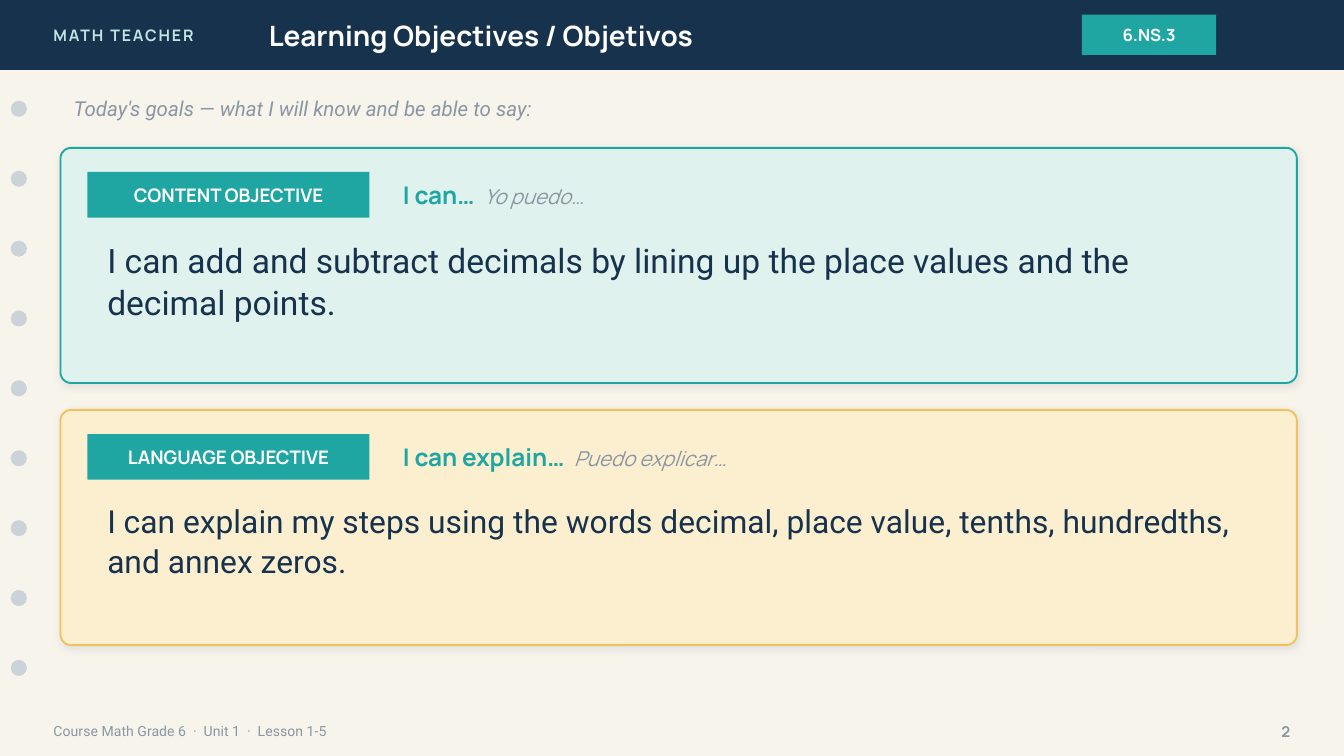
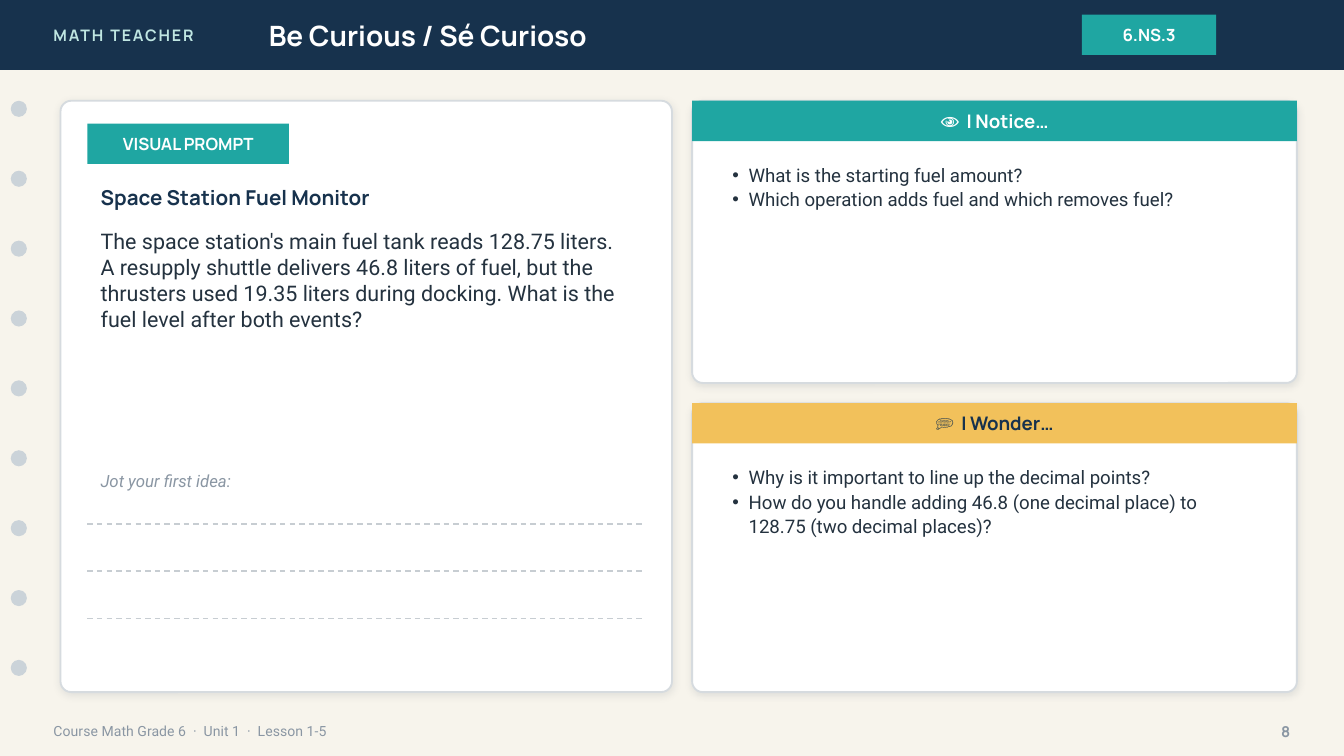
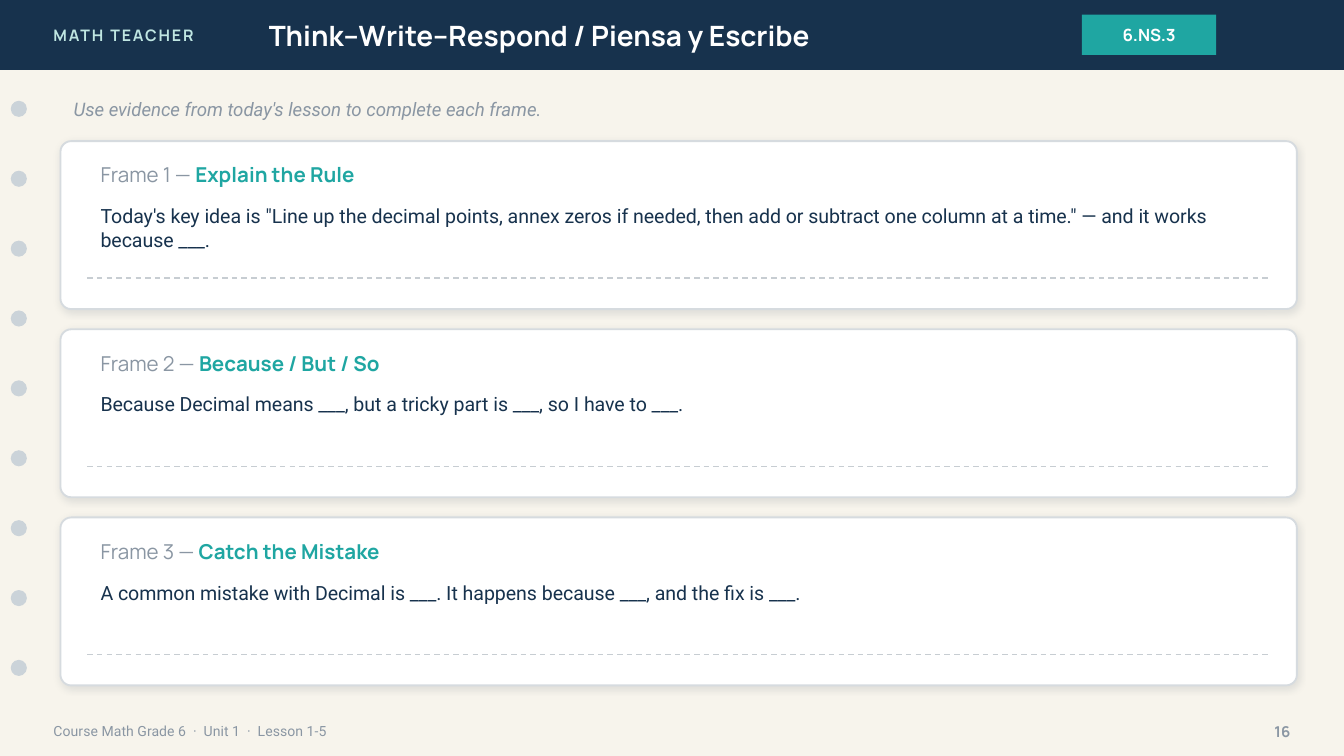
import lxml.etree
import pptx
import pptx.dml.color
import pptx.enum.dml
import pptx.enum.shapes
import pptx.enum.text
import pptx.oxml.ns
import pptx.util

Inches = pptx.util.Inches
Align = pptx.enum.text.PP_ALIGN
Anchor = pptx.enum.text.MSO_ANCHOR
Preset = pptx.enum.shapes.MSO_SHAPE

CREAM, NAVY, TEAL, GOLD = "F7F4EC", "17324D", "1FA6A2", "F2C15B"
MINT, SAND, WHITE, INK = "DFF2EE", "FBEFD0", "FFFFFF", "24323F"
GRAY, HOLE, BORDER, RULE = "8A96A3", "CBD3D9", "D6DBDF", "C7CDD2"
BRAND_MINT, SHADOW = "BFE6E2", "1C2E42"
HEAD, BODY = "Manrope", "Roboto"

TITLE_ONLY, TWO_CONTENT = 5, 3
LEFT, WIDTH, INSET = 0.45, 9.2, 0.2
BAND_HEIGHT = 0.52
CORNER_RADIUS = 0.08

BRAND = "MATH TEACHER"
STANDARD = "6.NS.3"
FOOTER = "Course Math Grade 6  ·  Unit 1  ·  Lesson 1-5"

OBJECTIVES = {
    "title": "Learning Objectives / Objetivos",
    "page": 2,
    "intro": "Today's goals — what I will know and be able to say:",
    "cards": [
        {"tag": "CONTENT OBJECTIVE", "stem": "I can…  ", "spanish": "Yo puedo…",
         "goal": "I can add and subtract decimals by lining up the place values "
                 "and the decimal points.",
         "size": 18, "fill": MINT, "border": TEAL},
        {"tag": "LANGUAGE OBJECTIVE", "stem": "I can explain…  ", "spanish": "Puedo explicar…",
         "goal": "I can explain my steps using the words decimal, place value, "
                 "tenths, hundredths, and annex zeros.",
         "size": 17, "fill": SAND, "border": GOLD},
    ],
}

CURIOUS = {
    "title": "Be Curious / Sé Curioso",
    "page": 8,
    "tag": "VISUAL PROMPT",
    "heading": "Space Station Fuel Monitor",
    "story": "The space station's main fuel tank reads 128.75 liters. A resupply shuttle "
             "delivers 46.8 liters of fuel, but the thrusters used 19.35 liters during "
             "docking. What is the fuel level after both events?",
    "jot": "Jot your first idea:",
    "panels": [
        {"heading": "👁  I Notice…", "fill": TEAL, "color": WHITE, "top": 0.75, "height": 2.1,
         "questions": ["What is the starting fuel amount?",
                       "Which operation adds fuel and which removes fuel?"]},
        {"heading": "💭  I Wonder…", "fill": GOLD, "color": NAVY, "top": 3, "height": 2.15,
         "questions": ["Why is it important to line up the decimal points?",
                       "How do you handle adding 46.8 (one decimal place) to 128.75 "
                       "(two decimal places)?"]},
    ],
}

RESPOND = {
    "title": "Think–Write–Respond / Piensa y Escribe",
    "page": 16,
    "intro": "Use evidence from today's lesson to complete each frame.",
    "frames": [
        ("Explain the Rule",
         "Today's key idea is \"Line up the decimal points, annex zeros if needed, then add "
         "or subtract one column at a time.\" — and it works because ___."),
        ("Because / But / So",
         "Because Decimal means ___, but a tricky part is ___, so I have to ___."),
        ("Catch the Mistake",
         "A common mistake with Decimal is ___. It happens because ___, and the fix is ___."),
    ],
}


def rgb(color):
    return pptx.dml.color.RGBColor.from_string(color)


def style(font, size, color, face=BODY, bold=False, italic=False):
    font.size, font.name = pptx.util.Pt(size), face
    font.bold, font.italic = bold, italic
    font.color.rgb = rgb(color)


def place(shape, left, top, width, height):
    shape.left, shape.top = Inches(left), Inches(top)
    shape.width, shape.height = Inches(width), Inches(height)


def write(shape, lines, size, color, align=Align.LEFT, anchor=Anchor.MIDDLE,
          spacing=1.0, bulleted=False, **look):
    frame = shape.text_frame
    frame.word_wrap = True
    frame.auto_size = pptx.enum.text.MSO_AUTO_SIZE.NONE
    frame.vertical_anchor = anchor
    frame.text = "\n".join(lines)
    for paragraph in frame.paragraphs:
        paragraph.alignment, paragraph.line_spacing = align, spacing
        paragraph.space_before = 0
        if bulleted:
            add_bullet(paragraph)
        style(paragraph.font, size, color, **look)
    return frame


def add_bullet(paragraph):
    properties = paragraph._p.get_or_add_pPr()
    hang = Inches(0.12)
    properties.set("marL", str(hang))
    properties.set("indent", str(-hang))
    bullet = lxml.etree.SubElement(properties, pptx.oxml.ns.qn("a:buChar"))
    bullet.set("char", "•")


def add_text(slide, box, text, size, color, **look):
    return write(slide.shapes.add_textbox(*map(Inches, box)), [text], size, color, **look)


def add_two_tone(slide, box, lead, rest):
    """Add one line made of two (text, style) parts."""
    frame = slide.shapes.add_textbox(*map(Inches, box)).text_frame
    frame.word_wrap = True
    frame.vertical_anchor = Anchor.MIDDLE
    for text, look in (lead, rest):
        run = frame.paragraphs[0].add_run()
        run.text = text
        style(run.font, face=HEAD, **look)


def add_block(slide, preset, box, fill):
    block = slide.shapes.add_shape(preset, *map(Inches, box))
    block.shadow.inherit = False
    block.fill.solid()
    block.fill.fore_color.rgb = rgb(fill)
    block.line.fill.background()
    return block


def add_label(slide, box, text, size, fill=TEAL, color=WHITE):
    block = add_block(slide, Preset.RECTANGLE, box, fill)
    write(block, [text], size, color, align=Align.CENTER, face=HEAD, bold=True)


def add_card(slide, box, fill=WHITE, border=BORDER):
    """Add a rounded card with a thin border and a soft shadow below."""
    card = add_block(slide, Preset.ROUNDED_RECTANGLE, box, fill)
    card.adjustments[0] = CORNER_RADIUS / min(box[2:])
    card.line.color.rgb = rgb(border)
    card.line.width = pptx.util.Pt(1)
    qn = pptx.oxml.ns.qn
    effects = card._element.spPr.find(qn("a:effectLst"))
    shadow = lxml.etree.SubElement(
        effects, qn("a:outerShdw"), blurRad=str(pptx.util.Pt(4)),
        dist=str(pptx.util.Pt(1)), dir="5400000", algn="bl", rotWithShape="0")
    tint = lxml.etree.SubElement(shadow, qn("a:srgbClr"), val=SHADOW)
    lxml.etree.SubElement(tint, qn("a:alpha"), val="10000")


def add_writing_line(slide, left, right, top):
    rule = slide.shapes.add_connector(
        pptx.enum.shapes.MSO_CONNECTOR.STRAIGHT,
        Inches(left), Inches(top), Inches(right), Inches(top))
    rule.line.color.rgb = rgb(RULE)
    rule.line.width = pptx.util.Pt(0.75)
    rule.line.dash_style = pptx.enum.dml.MSO_LINE.DASH
    lxml.etree.SubElement(rule._element.spPr, pptx.oxml.ns.qn("a:effectLst"))


def bring_to_front(slide, shape):
    slide.shapes._spTree.append(shape._element)


def start_slide(deck, content, layout=TITLE_ONLY):
    """Add a slide with the header band, binder holes and footer."""
    slide = deck.slides.add_slide(deck.slide_layouts[layout])
    slide.background.fill.solid()
    slide.background.fill.fore_color.rgb = rgb(CREAM)

    add_block(slide, Preset.RECTANGLE, (0, 0, 10, BAND_HEIGHT), NAVY)
    brand = add_text(slide, (0.3, 0, 2.4, BAND_HEIGHT), BRAND, 8.5, BRAND_MINT,
                     face=HEAD, bold=True)
    brand.paragraphs[0].font._element.set("spc", "100")
    title = slide.shapes.title
    place(title, 1.9, 0, 5.6, BAND_HEIGHT)
    write(title, [content["title"]], 15, WHITE, face=HEAD, bold=True)
    bring_to_front(slide, title)
    add_label(slide, (8.05, 0.11, 1, 0.3), STANDARD, 9)

    for hole in range(9):
        add_block(slide, Preset.OVAL, (0.08, 0.75 + 0.52 * hole, 0.12, 0.12), HOLE)

    add_text(slide, (0.3, 5.3, 7, 0.28), FOOTER, 7.5, GRAY)
    add_text(slide, (9.2, 5.3, 0.5, 0.28), str(content["page"]), 8, GRAY,
             align=Align.RIGHT, face=HEAD, bold=True)
    return slide


def add_intro(slide, text, size):
    add_text(slide, (LEFT, 0.66, WIDTH, 0.3), text, size, GRAY, italic=True)


def build_objectives(deck):
    slide = start_slide(deck, OBJECTIVES)
    add_intro(slide, OBJECTIVES["intro"], 11)
    for row, card in enumerate(OBJECTIVES["cards"]):
        top = 1.1 + 1.95 * row
        add_card(slide, (LEFT, top, WIDTH, 1.75), card["fill"], card["border"])
        add_label(slide, (LEFT + INSET, top + 0.18, 2.1, 0.34), card["tag"], 10)
        add_two_tone(slide, (2.9, top + 0.18, 6.6, 0.34),
                     (card["stem"], {"size": 13, "color": TEAL, "bold": True}),
                     (card["spanish"], {"size": 11, "color": GRAY, "italic": True}))
        add_text(slide, (0.7, top + 0.62, 8.7, 1), card["goal"], card["size"], NAVY,
                 anchor=Anchor.TOP, spacing=1.05)


def build_curious(deck):
    slide = start_slide(deck, CURIOUS, TWO_CONTENT)
    left, width = LEFT + INSET, 4.15
    add_card(slide, (LEFT, 0.75, width + 2 * INSET, 4.4))
    add_label(slide, (left, 0.92, 1.5, 0.3), CURIOUS["tag"], 9)
    add_text(slide, (left, 1.32, width, 0.3), CURIOUS["heading"], 11, NAVY,
             face=HEAD, bold=True)
    add_text(slide, (left, 1.65, width, 1.7), CURIOUS["story"], 11.5, INK, anchor=Anchor.TOP)
    add_text(slide, (left, 3.45, 4, 0.25), CURIOUS["jot"], 9, GRAY, italic=True)
    for row in range(3):
        add_writing_line(slide, left, left + width, 3.9 + 0.35 * row)

    panel_left, panel_width = 5.15, 4.5
    for index, panel in enumerate(CURIOUS["panels"], start=1):
        top, height = panel["top"], panel["height"]
        add_card(slide, (panel_left, top, panel_width, height))
        add_label(slide, (panel_left, top, panel_width, 0.3), panel["heading"], 10,
                  panel["fill"], panel["color"])
        questions = slide.placeholders[index]
        place(questions, panel_left + INSET, top + 0.4, panel_width - 2 * INSET, height - 0.5)
        write(questions, panel["questions"], 10, INK, anchor=Anchor.TOP,
              spacing=1.1, bulleted=True)
        bring_to_front(slide, questions)


def build_respond(deck):
    slide = start_slide(deck, RESPOND)
    add_intro(slide, RESPOND["intro"], 10)
    left, width = LEFT + INSET, WIDTH - 2 * INSET
    for number, (heading, sentence) in enumerate(RESPOND["frames"], start=1):
        top = 1.05 + 1.4 * (number - 1)
        add_card(slide, (LEFT, top, WIDTH, 1.25))
        add_two_tone(slide, (left, top + 0.1, width, 0.3),
                     (f"Frame {number} — ", {"size": 11, "color": GRAY}),
                     (heading, {"size": 11, "color": TEAL, "bold": True}))
        add_text(slide, (left, top + 0.42, width, 0.4), sentence, 10.5, NAVY,
                 anchor=Anchor.TOP)
        add_writing_line(slide, left, left + width, top + 1.02)


def main():
    deck = pptx.Presentation()
    deck.slide_width, deck.slide_height = Inches(10), Inches(10 * 9 / 16)
    build_objectives(deck)
    build_curious(deck)
    build_respond(deck)
    deck.save("out.pptx")


if __name__ == "__main__":
    main()
